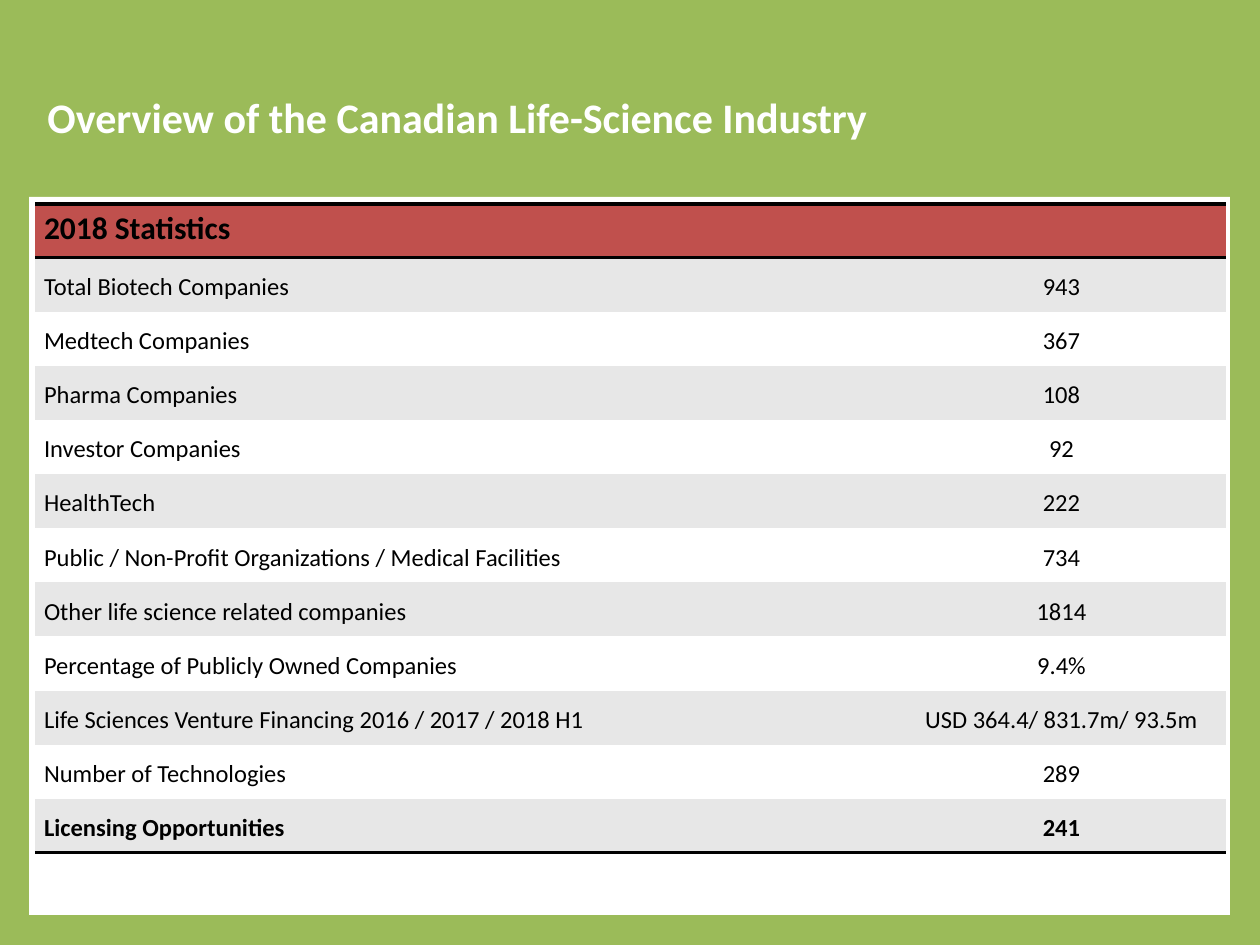
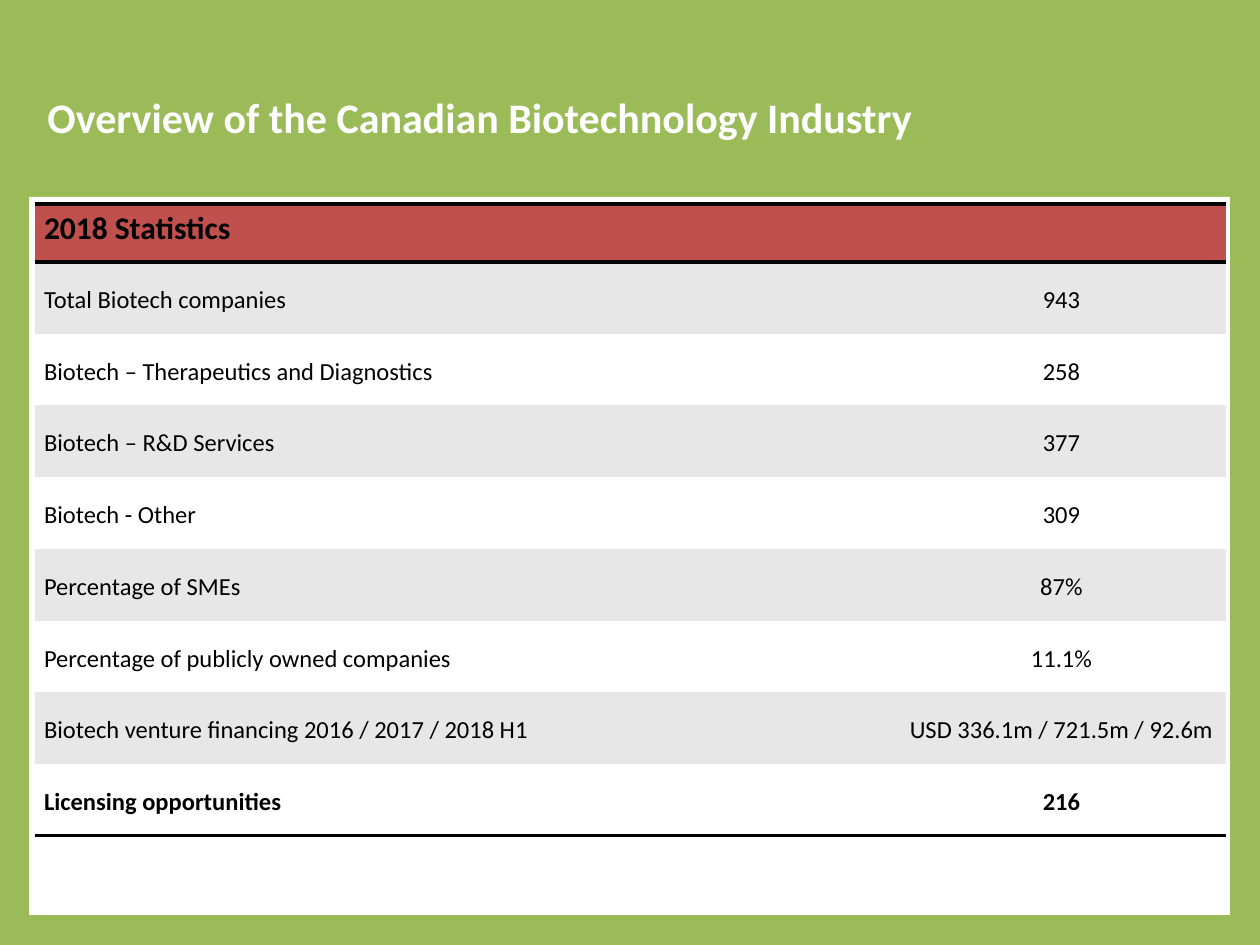
import dataclasses

import pptx
import pptx.dml.color
import pptx.enum.shapes
import pptx.enum.text
import pptx.oxml
import pptx.oxml.ns
import pptx.util


@dataclasses.dataclass(frozen=True)
class Theme:
    font: str = "Calibri"
    background: str = "9BBB59"
    panel: str = "FFFFFF"
    title: str = "FFFFFF"
    text: str = "000000"
    header: str = "C0504D"
    bands: tuple = ("E7E7E7", "FFFFFF")
    title_size: int = 24
    header_size: int = 18
    body_size: int = 14
    rule_width: int = 2


theme = Theme()
rgb = pptx.dml.color.RGBColor.from_string
SCALE = pptx.util.Inches(1) / 126
PLAIN_TABLE_STYLE = "{2D5ABB26-0587-4C30-8999-92F81FD0307C}"
TABLE_LEFT, TABLE_TOP = 35, 204
COLUMN_WIDTHS = (862, 329)


def px(*lengths):
    return [round(length * SCALE) for length in lengths]


def write(frame, text, size, color, bold):
    """Put one formatted paragraph in a text frame and return it."""
    paragraph = frame.paragraphs[0]
    paragraph.text = text
    formats = {"name": theme.font, "size": pptx.util.Pt(size), "bold": bold}
    for name, value in formats.items():
        setattr(paragraph.font, name, value)
    paragraph.font.color.rgb = rgb(color)
    return paragraph


overviews = [
    {
        "title": "Overview of the Canadian Life-Science Industry",
        "header_height": 54,
        "table_bottom": 853,
        "statistics": [
            ("Total Biotech Companies", "943"),
            ("Medtech Companies", "367"),
            ("Pharma Companies", "108"),
            ("Investor Companies", "92"),
            ("HealthTech", "222"),
            ("Public / Non-Profit Organizations / Medical Facilities", "734"),
            ("Other life science related companies", "1814"),
            ("Percentage of Publicly Owned Companies", "9.4%"),
            ("Life Sciences Venture Financing 2016 / 2017 / 2018 H1", "USD 364.4/ 831.7m/ 93.5m"),
            ("Number of Technologies", "289"),
            ("Licensing Opportunities", "241"),
        ],
    },
    {
        "title": "Overview of the Canadian Biotechnology Industry",
        "header_height": 58,
        "table_bottom": 836,
        "statistics": [
            ("Total Biotech companies", "943"),
            ("Biotech – Therapeutics and Diagnostics", "258"),
            ("Biotech – R&D Services", "377"),
            ("Biotech - Other", "309"),
            ("Percentage of SMEs", "87%"),
            ("Percentage of publicly owned companies", "11.1%"),
            ("Biotech venture financing 2016 / 2017 / 2018 H1", "USD 336.1m / 721.5m / 92.6m"),
            ("Licensing opportunities", "216"),
        ],
    },
]

presentation = pptx.Presentation()
presentation.slide_width, presentation.slide_height = px(1260, 945)

for overview in overviews:
    slide = presentation.slides.add_slide(presentation.slide_layouts[6])
    slide.background.fill.solid()
    slide.background.fill.fore_color.rgb = rgb(theme.background)

    panel = slide.shapes.add_shape(
        pptx.enum.shapes.MSO_SHAPE.RECTANGLE, *px(29, 197, 1201, 718)
    )
    panel.shadow.inherit = False
    panel.fill.solid()
    panel.fill.fore_color.rgb = rgb(theme.panel)
    panel.line.fill.background()

    title = slide.shapes.add_textbox(*px(35, 38, 1134, 157))
    title.text_frame.word_wrap = True
    title.text_frame.vertical_anchor = pptx.enum.text.MSO_ANCHOR.MIDDLE
    write(title.text_frame, overview["title"], theme.title_size, theme.title, True)

    rows = [("2018 Statistics", ""), *overview["statistics"]]
    last = len(rows) - 1
    table_height = overview["table_bottom"] - TABLE_TOP
    body_height = (table_height - overview["header_height"]) / last
    table = slide.shapes.add_table(
        len(rows), 2, *px(TABLE_LEFT, TABLE_TOP, sum(COLUMN_WIDTHS), table_height)
    ).table
    table.horz_banding = False
    table._tbl.tblPr.find(pptx.oxml.ns.qn("a:tableStyleId")).text = PLAIN_TABLE_STYLE
    for column, width in zip(table.columns, px(*COLUMN_WIDTHS)):
        column.width = width

    for row_index, values in enumerate(rows):
        is_header = row_index == 0
        row_height = overview["header_height"] if is_header else body_height
        table.rows[row_index].height = px(row_height)[0]
        fill_color = theme.header if is_header else theme.bands[(row_index - 1) % 2]
        size = theme.header_size if is_header else theme.body_size
        anchor = pptx.enum.text.MSO_ANCHOR.TOP if is_header else pptx.enum.text.MSO_ANCHOR.MIDDLE
        edges = {0: ("lnT", "lnB"), last: ("lnB",)}.get(row_index, ())

        for column_index, value in enumerate(values):
            cell = table.cell(row_index, column_index)
            cell.margin_left, cell.margin_right, cell.margin_top, cell.margin_bottom = px(9, 9, 0, 0)
            cell.vertical_anchor = anchor
            paragraph = write(cell.text_frame, value, size, theme.text, row_index in (0, last))
            paragraph.line_spacing = 1.15
            if column_index == 1:
                paragraph.alignment = pptx.enum.text.PP_ALIGN.CENTER
            properties = cell._tc.get_or_add_tcPr()
            for edge in edges:
                properties.append(pptx.oxml.parse_xml(
                    f'<a:{edge} {pptx.oxml.ns.nsdecls("a")} w="{pptx.util.Pt(theme.rule_width)}">'
                    f'<a:solidFill><a:srgbClr val="{theme.text}"/></a:solidFill></a:{edge}>'
                ))
            cell.fill.solid()
            cell.fill.fore_color.rgb = rgb(fill_color)
    table.cell(0, 0).merge(table.cell(0, 1))

presentation.save("out.pptx")
